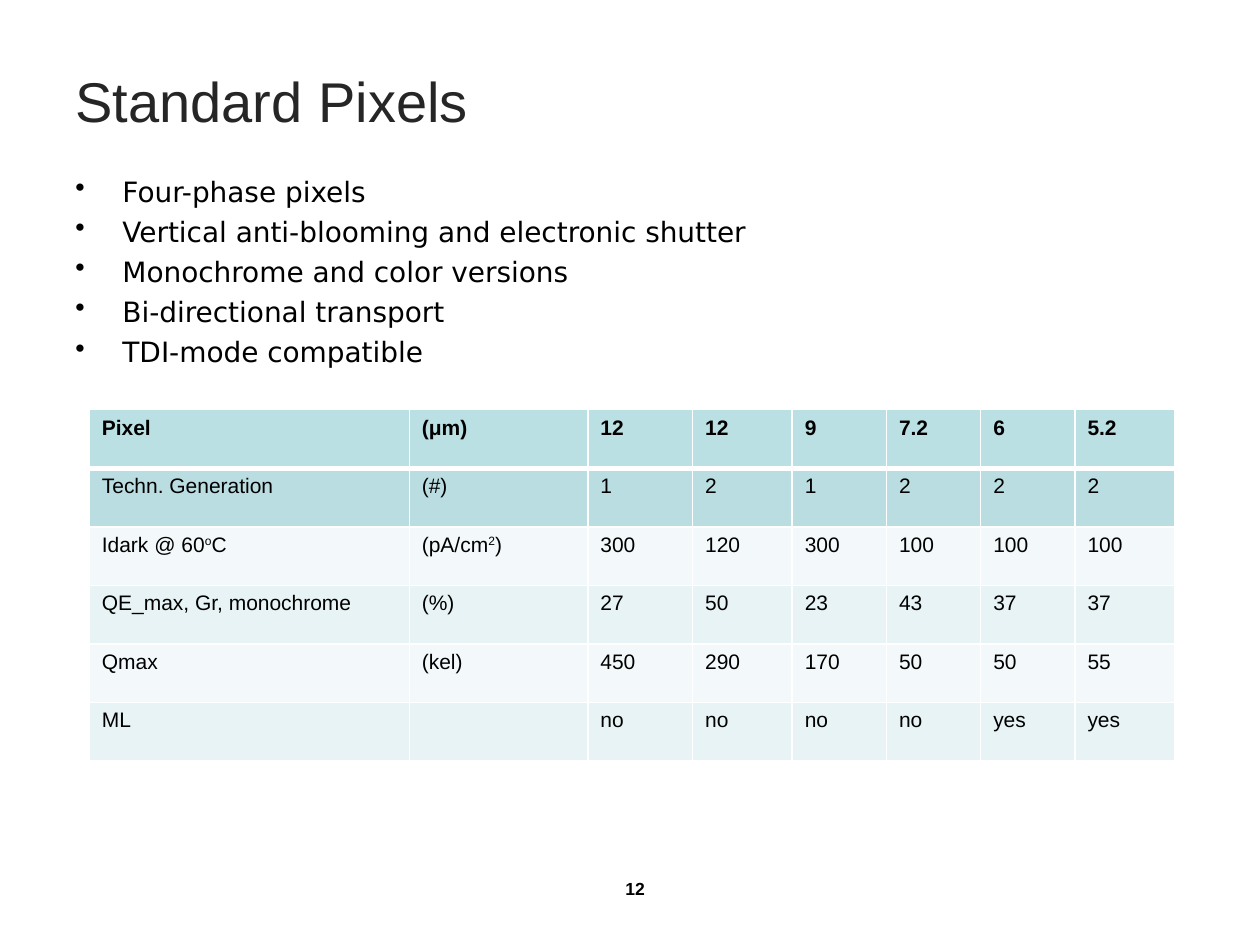
from dataclasses import dataclass

import lxml.etree
import pptx
import pptx.dml.color
import pptx.enum.text
import pptx.oxml
import pptx.oxml.ns
import pptx.util
from pptx.util import Cm, Pt

BLACK = "000000"
WHITE = "FFFFFF"
HEADER_BORDER = 3
INNER_BORDER = 1
ROW_HEIGHT = 1.18
COLUMN_WIDTHS = (6.45, 3.6, 2.11, 2.01, 1.9, 1.9, 1.9, 2.02)
BULLETS = (
    "Four-phase pixels",
    "Vertical anti-blooming and electronic shutter",
    "Monochrome and color versions",
    "Bi-directional transport",
    "TDI-mode compatible",
)


@dataclass(frozen=True)
class TextStyle:
    size: float
    font: str = "Arial"
    color: str = BLACK
    bold: bool = False


@dataclass(frozen=True)
class Box:
    """Position and size in centimetres."""
    left: float
    top: float
    width: float
    height: float

    def lengths(self) -> tuple:
        return Cm(self.left), Cm(self.top), Cm(self.width), Cm(self.height)


@dataclass(frozen=True)
class PixelRow:
    """One table row; text between bars is superscript."""
    label: str
    unit: str
    values: tuple
    fill: str

    def texts(self) -> tuple:
        return (self.label, self.unit, *self.values)


PIXEL_ROWS = (
    PixelRow("Pixel", "(μm)", ("12", "12", "9", "7.2", "6", "5.2"), "BBE0E3"),
    PixelRow("Techn. Generation", "(#)", ("1", "2", "1", "2", "2", "2"), "BADDE1"),
    PixelRow("Idark @ 60|o|C", "(pA/cm|2|)",
             ("300", "120", "300", "100", "100", "100"), "F3F9FA"),
    PixelRow("QE_max, Gr, monochrome", "(%)",
             ("27", "50", "23", "43", "37", "37"), "E7F3F4"),
    PixelRow("Qmax", "(kel)", ("450", "290", "170", "50", "50", "55"), "F3F9FA"),
    PixelRow("ML", "", ("no", "no", "no", "no", "yes", "yes"), "E7F3F4"),
)


def rgb(color: str) -> pptx.dml.color.RGBColor:
    return pptx.dml.color.RGBColor.from_string(color)


def format_runs(paragraph, style: TextStyle) -> None:
    for run in paragraph.runs:
        run.font.name = style.font
        run.font.size = Pt(style.size)
        run.font.bold = style.bold
        run.font.color.rgb = rgb(style.color)


def add_title(slide, text: str, box: Box, style: TextStyle) -> None:
    title = slide.shapes.title
    title.left, title.top, title.width, title.height = box.lengths()
    title.text_frame.text = text
    title.text_frame.vertical_anchor = pptx.enum.text.MSO_ANCHOR.MIDDLE
    paragraph = title.text_frame.paragraphs[0]
    paragraph.alignment = pptx.enum.text.PP_ALIGN.LEFT
    format_runs(paragraph, style)


def add_text(slide, text: str, box: Box, style: TextStyle):
    text_frame = slide.shapes.add_textbox(*box.lengths()).text_frame
    text_frame.word_wrap = True
    text_frame.text = text
    for paragraph in text_frame.paragraphs:
        format_runs(paragraph, style)
    return text_frame


def add_bullets(text_frame, indent: float, space_before: float) -> None:
    for index, paragraph in enumerate(text_frame.paragraphs):
        if index:
            paragraph.space_before = Pt(space_before)
        properties = paragraph._p.get_or_add_pPr()
        properties.set("marL", str(Cm(indent)))
        properties.set("indent", str(-Cm(indent)))
        bullet = lxml.etree.SubElement(properties, pptx.oxml.ns.qn("a:buChar"))
        bullet.set("char", "•")


def set_borders(cell, top: float, bottom: float) -> None:
    widths = {"L": INNER_BORDER, "R": INNER_BORDER, "T": top, "B": bottom}
    properties = cell._tc.get_or_add_tcPr()
    for position, (side, width) in enumerate(widths.items()):
        line = pptx.oxml.parse_xml(
            f'<a:ln{side} {pptx.oxml.ns.nsdecls("a")} w="{Pt(width)}">'
            f'<a:solidFill><a:srgbClr val="{WHITE}"/></a:solidFill></a:ln{side}>'
        )
        properties.insert(position, line)


def fill_cell(cell, text: str, fill: str, style: TextStyle) -> None:
    cell.fill.solid()
    cell.fill.fore_color.rgb = rgb(fill)
    paragraph = cell.text_frame.paragraphs[0]
    paragraph.alignment = pptx.enum.text.PP_ALIGN.LEFT
    for index, part in enumerate(text.split("|")):
        if part:
            run = paragraph.add_run()
            run.text = part
            if index % 2:
                run.font._element.set("baseline", "30000")
    format_runs(paragraph, style)


def add_pixel_table(slide, left: float, top: float) -> None:
    box = Box(left, top, sum(COLUMN_WIDTHS), ROW_HEIGHT * len(PIXEL_ROWS))
    table = slide.shapes.add_table(
        len(PIXEL_ROWS), len(COLUMN_WIDTHS), *box.lengths()).table
    for column, width in zip(table.columns, COLUMN_WIDTHS):
        column.width = Cm(width)
    for row_index, pixel_row in enumerate(PIXEL_ROWS):
        table.rows[row_index].height = Cm(ROW_HEIGHT)
        style = TextStyle(12, bold=row_index == 0)
        top_border = HEADER_BORDER if row_index == 1 else INNER_BORDER
        bottom_border = HEADER_BORDER if row_index == 0 else INNER_BORDER
        for column_index, text in enumerate(pixel_row.texts()):
            cell = table.cell(row_index, column_index)
            fill_cell(cell, text, pixel_row.fill, style)
            set_borders(cell, top_border, bottom_border)


def main() -> None:
    presentation = pptx.Presentation()
    presentation.slide_width = Cm(25.4)
    presentation.slide_height = Cm(19.05)
    slide = presentation.slides.add_slide(presentation.slide_layouts[5])

    add_title(slide, "Standard Pixels", Box(1.27, 0.85, 22.86, 2.33),
              TextStyle(32, color="262626"))
    features = add_text(slide, "\n".join(BULLETS), Box(1.27, 3.39, 22.86, 4.23),
                        TextStyle(16, font="DejaVu Sans"))
    add_bullets(features, indent=0.95, space_before=3.7)
    add_pixel_table(slide, left=1.8, top=8.26)
    number = add_text(slide, "12", Box(12.07, 17.58, 1.47, 0.69),
                      TextStyle(10, bold=True))
    number.paragraphs[0].alignment = pptx.enum.text.PP_ALIGN.CENTER

    presentation.save("out.pptx")


if __name__ == "__main__":
    main()
